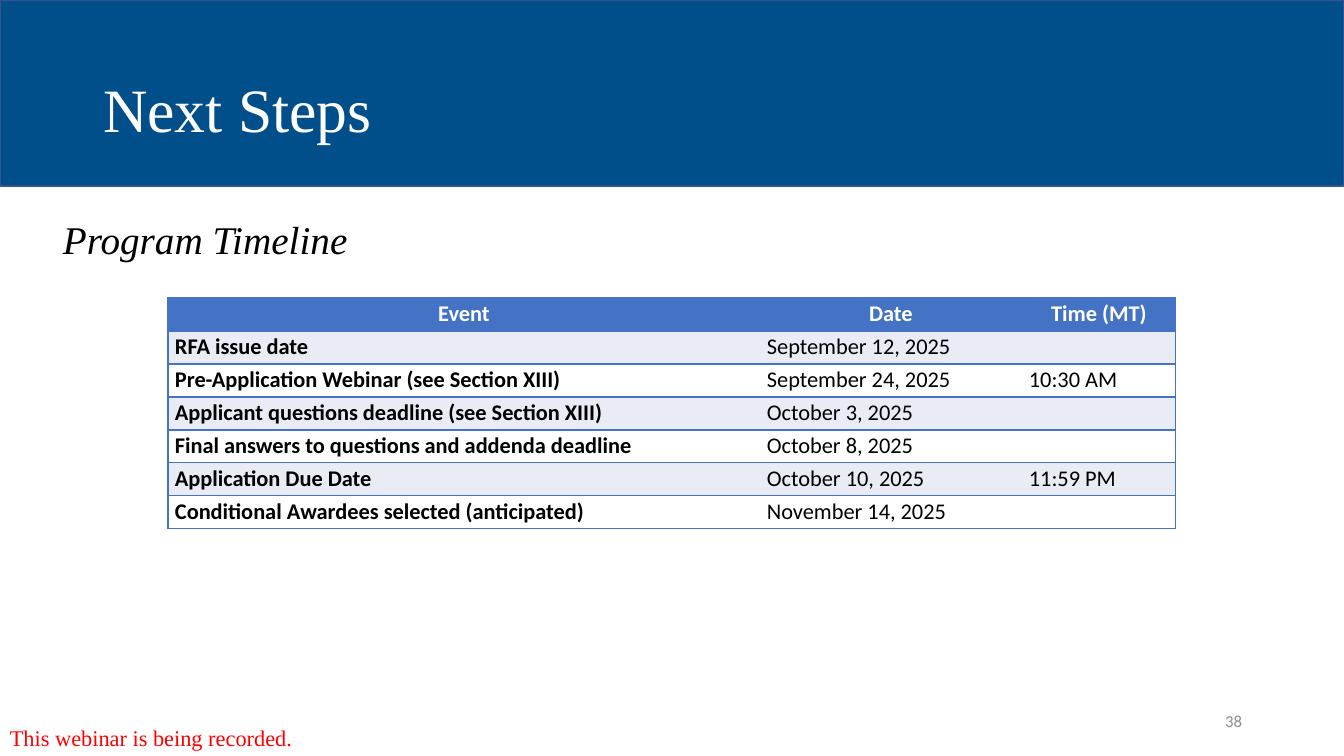
"""Build the Next Steps slide with its program timeline table."""
import pptx
import pptx.util
import pptx.dml.color
import pptx.enum.shapes
import pptx.enum.text
import pptx.oxml
import pptx.oxml.ns

COLORS = {
    "band": "004F8A", "band_line": "325491", "white": "FFFFFF", "black": "000000",
    "notice": "FF0000", "number": "8C8C8C", "accent": "4472C4", "stripe": "E9EBF5",
}
SERIF, SANS = "Times New Roman", "Calibri"
ALIGN, ANCHOR = pptx.enum.text.PP_ALIGN, pptx.enum.text.MSO_ANCHOR

TITLE = "Next Steps"
SUBTITLE = "Program Timeline"
NOTICE = "This webinar is being recorded."
PAGE = "38"
TIMELINE = [
    ("Event", "Date", "Time (MT)"),
    ("RFA issue date", "September 12, 2025", ""),
    ("Pre-Application Webinar (see Section XIII)", "September 24, 2025", "10:30 AM"),
    ("Applicant questions deadline (see Section XIII)", "October 3, 2025", ""),
    ("Final answers to questions and addenda deadline", "October 8, 2025", ""),
    ("Application Due Date", "October 10, 2025", "11:59 PM"),
    ("Conditional Awardees selected (anticipated)", "November 14, 2025", ""),
]
COLUMN_WIDTHS = (592, 262, 154)
ROW_HEIGHT = 33


def px(length):
    return round(length * 914400 / 100.8)


def box(*lengths):
    return [px(length) for length in lengths]


def rgb(name):
    return pptx.dml.color.RGBColor.from_string(COLORS[name])


def write(frame, text, size, font, color, align=ALIGN.LEFT, anchor=ANCHOR.TOP,
          spacing=1.0, bold=False, italic=False):
    frame.word_wrap = True
    frame.vertical_anchor = anchor
    frame.text = text
    paragraph = frame.paragraphs[0]
    paragraph.alignment = align
    paragraph.line_spacing = spacing
    for run in paragraph.runs:
        run.font.size = pptx.util.Pt(size)
        run.font.name = font
        run.font.bold = bold
        run.font.italic = italic
        run.font.color.rgb = rgb(color)
    return paragraph


def set_borders(cell, visible_sides):
    properties = cell._tc.get_or_add_tcPr()
    for position, side in enumerate("LRTB"):
        paint = "<a:noFill/>"
        if side in visible_sides:
            paint = f'<a:solidFill><a:srgbClr val="{COLORS["accent"]}"/></a:solidFill>'
        properties.insert(position, pptx.oxml.parse_xml(
            f'<a:ln{side} {pptx.oxml.ns.nsdecls("a")} w="12700">{paint}</a:ln{side}>'))


def add_timeline(slide):
    table = slide.shapes.add_table(
        len(TIMELINE), len(COLUMN_WIDTHS),
        *box(168, 298, sum(COLUMN_WIDTHS), ROW_HEIGHT * len(TIMELINE))).table
    for column, width in zip(table.columns, COLUMN_WIDTHS):
        column.width = px(width)
    for r, entries in enumerate(TIMELINE):
        table.rows[r].height = px(ROW_HEIGHT)
        header = r == 0
        for c, entry in enumerate(entries):
            cell = table.cell(r, c)
            cell.margin_left = cell.margin_right = px(7)
            cell.margin_top = cell.margin_bottom = 0
            cell.fill.solid()
            cell.fill.fore_color.rgb = rgb(
                "accent" if header else "stripe" if r % 2 else "white")
            set_borders(cell, "TB" + {0: "L", len(entries) - 1: "R"}.get(c, ""))
            paragraph = write(
                cell.text_frame, entry, 16, SANS, "white" if header else "black",
                align=ALIGN.CENTER if header else ALIGN.JUSTIFY,
                spacing=1.07, bold=header or c == 0)
            paragraph.space_after = pptx.util.Pt(6)


def main():
    deck = pptx.Presentation()
    deck.slide_width, deck.slide_height = box(1344, 756)
    slide = deck.slides.add_slide(deck.slide_layouts[5])
    shapes = slide.shapes

    title = shapes.title
    title.left, title.top, title.width, title.height = box(93, 40, 1159, 146)
    write(title.text_frame, TITLE, 44, SERIF, "white", anchor=ANCHOR.MIDDLE, spacing=0.9)

    band = shapes.add_shape(
        pptx.enum.shapes.MSO_SHAPE.RECTANGLE, *box(0, 0, 1344, 186))
    band.shadow.inherit = False
    band.fill.solid()
    band.fill.fore_color.rgb = rgb("band")
    band.line.color.rgb = rgb("band_line")
    band.line.width = pptx.util.Pt(1)
    title.element.addprevious(band.element)

    subtitle = shapes.add_textbox(*box(53, 210, 453, 57))
    write(subtitle.text_frame, SUBTITLE, 28, SERIF, "black", italic=True)
    notice = shapes.add_textbox(*box(0, 580, 1008, 176))
    write(notice.text_frame, NOTICE, 16, SERIF, "notice", anchor=ANCHOR.BOTTOM, spacing=0.9)
    page = shapes.add_textbox(*box(950, 701, 302, 40))
    write(page.text_frame, PAGE, 12, SANS, "number", align=ALIGN.RIGHT, anchor=ANCHOR.MIDDLE)

    add_timeline(slide)
    deck.save("out.pptx")


if __name__ == "__main__":
    main()
